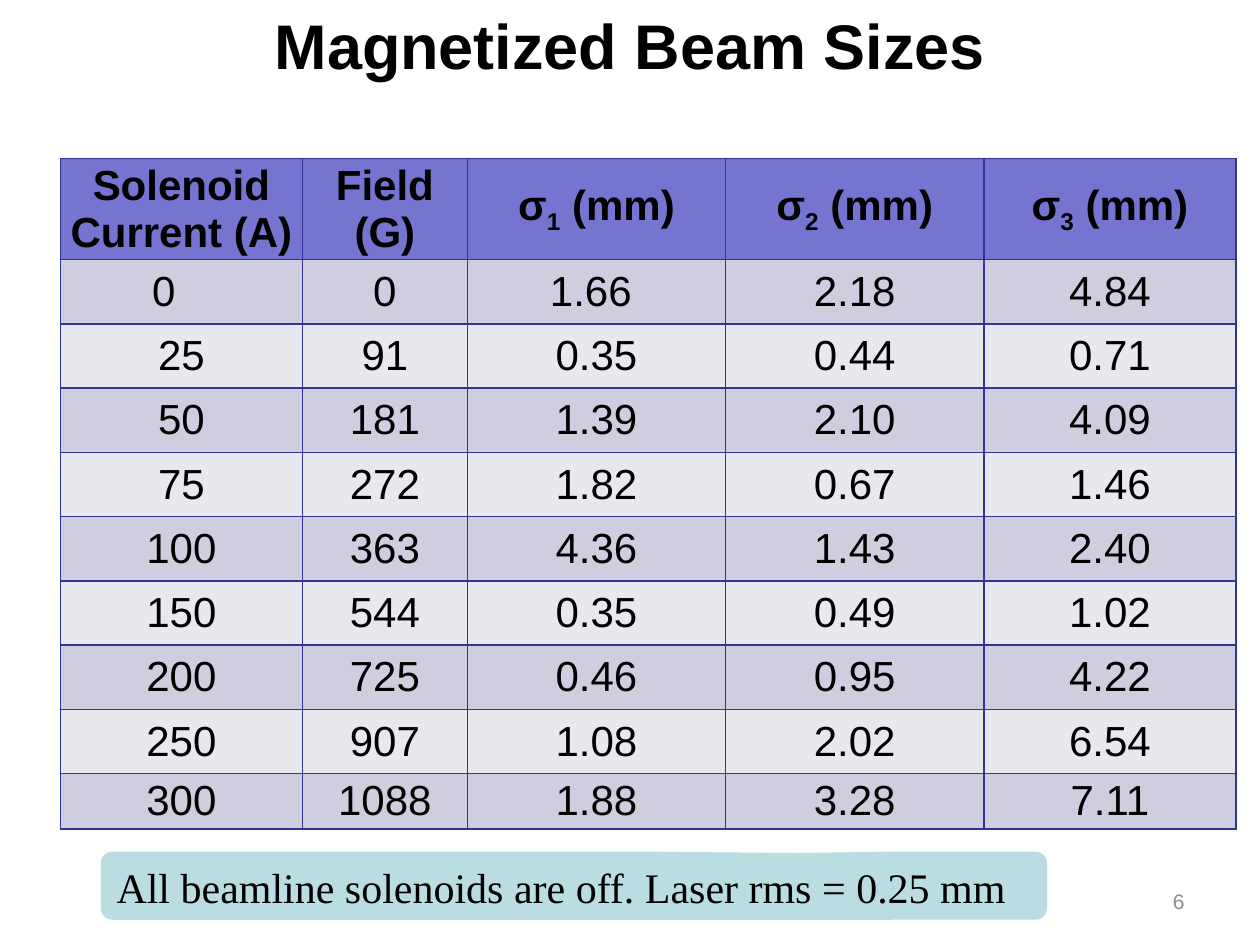
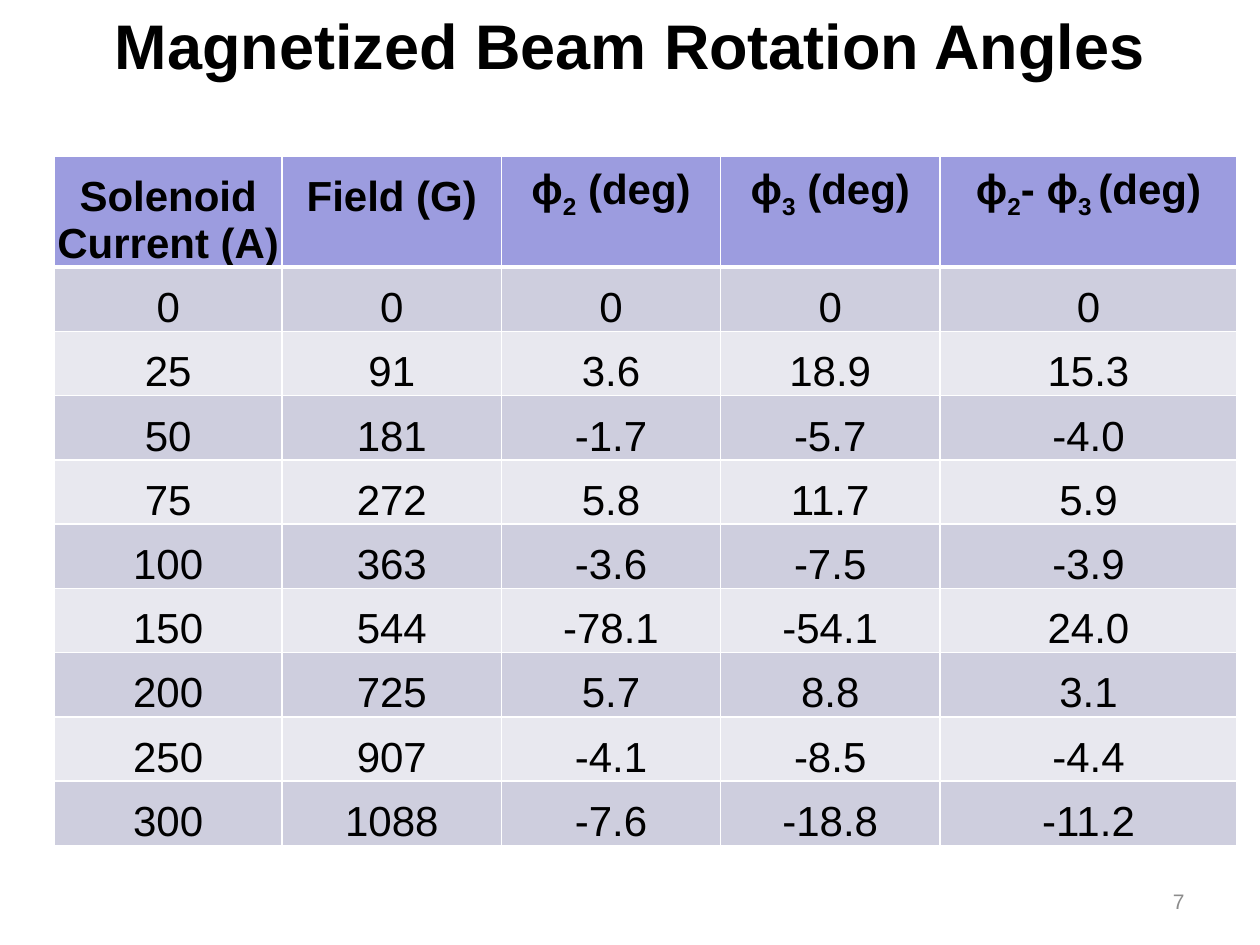
from dataclasses import dataclass
from lxml.etree import SubElement
from pptx import Presentation
from pptx.dml.color import RGBColor
from pptx.enum.shapes import MSO_SHAPE as Shape
from pptx.enum.text import MSO_ANCHOR as Anchor, MSO_AUTO_SIZE as Fit, PP_ALIGN as Align
from pptx.oxml.ns import qn
from pptx.util import Inches, Pt


@dataclass(frozen=True)
class Theme:
    sans: str = "Arial"
    serif: str = "Times New Roman"
    ink: str = "000000"
    gray: str = "8C8C8C"
    white: str = "FFFFFF"
    navy: str = "333399"
    violet: str = "7575D1"
    lilac: str = "9C9CDF"
    bands: tuple = ("CECEDE", "E8E8EF")
    note: str = "BADDE1"
    title: int = 36
    body: int = 24
    small: int = 12


THEME = Theme()
AMPS = "0 25 50 75 100 150 200 250 300".split()
FIELDS = "0 91 181 272 363 544 725 907 1088".split()
SIZES = (
    "1.66 0.35 1.39 1.82 4.36 0.35 0.46 1.08 1.88".split(),
    "2.18 0.44 2.10 0.67 1.43 0.49 0.95 2.02 3.28".split(),
    "4.84 0.71 4.09 1.46 2.40 1.02 4.22 6.54 7.11".split(),
)
ANGLES = (
    "0 3.6 -1.7 5.8 -3.6 -78.1 5.7 -4.1 -7.6".split(),
    "0 18.9 -5.7 11.7 -7.5 -54.1 8.8 -8.5 -18.8".split(),
    "0 15.3 -4.0 5.9 -3.9 24.0 3.1 -4.4 -11.2".split(),
)


def style(para, size, color=THEME.ink, bold=False, align=Align.CENTER, face=THEME.sans):
    para.alignment = align
    font = para.font
    font.name, font.size, font.bold = face, Pt(size), bold
    font.color.rgb = RGBColor.from_string(color)


def paint(fill, color):
    fill.solid()
    fill.fore_color.rgb = RGBColor.from_string(color)


def add_title(slide, text):
    title = slide.shapes.title
    title.left, title.top, title.width, title.height = map(Inches, (0, 0, 10, 0.96))
    frame = title.text_frame
    frame.text = text
    frame.auto_size = Fit.NONE
    frame.vertical_anchor = Anchor.TOP
    style(frame.paragraphs[0], THEME.title, bold=True)


def add_number(slide, number):
    box = slide.shapes.add_textbox(*map(Inches, (7.17, 6.95, 2.33, 0.4)))
    frame = box.text_frame
    frame.word_wrap = True
    frame.vertical_anchor = Anchor.MIDDLE
    para = frame.paragraphs[0]
    para.text = str(number)
    style(para, THEME.small, THEME.gray, align=Align.RIGHT)


def add_note(slide, text):
    note = slide.shapes.add_shape(
        Shape.ROUNDED_RECTANGULAR_CALLOUT, *map(Inches, (0.8, 6.76, 7.51, 0.54)))
    for index, value in enumerate((0.234, -0.48, 0.167)):
        note.adjustments[index] = value
    note.shadow.inherit = False
    note.line.fill.background()
    paint(note.fill, THEME.note)
    frame = note.text_frame
    frame.text = text
    frame.vertical_anchor = Anchor.TOP
    style(frame.paragraphs[0], THEME.body, align=Align.LEFT, face=THEME.serif)


def add_edges(cell, color, base):
    props = cell._tc.get_or_add_tcPr()
    for index, (side, width) in enumerate(zip("LRTB", (1, 1, 1, base))):
        line = props.makeelement(qn(f"a:ln{side}"), {"w": str(Pt(width))})
        fill = SubElement(line, qn("a:solidFill"))
        SubElement(fill, qn("a:srgbClr"), val=color)
        props.insert(index, line)


def fill_cell(cell, text, color, anchor, bold=False):
    cell.margin_left = cell.margin_right = cell.margin_top = cell.margin_bottom = 0
    cell.vertical_anchor = anchor
    paint(cell.fill, color)
    frame = cell.text_frame
    for row, line in enumerate(text.split("\n")):
        para = frame.add_paragraph() if row else frame.paragraphs[0]
        style(para, THEME.body, bold=bold)
        for index, part in enumerate(line.split("_")):
            run = para.add_run()
            run.text = part
            if index % 2:
                run.font._element.set("baseline", "-25000")


def add_grid(slide, spot, widths, heights, heads, data, head, edge, anchor, rule=1):
    rows = [heads, *zip(AMPS, FIELDS, *data)]
    frame = slide.shapes.add_table(
        len(rows), len(heads), *map(Inches, (*spot, sum(widths), sum(heights))))
    table = frame.table
    table.first_row = table.horz_banding = False
    for column, width in zip(table.columns, widths):
        column.width = Inches(width)
    for index, (row, height, texts) in enumerate(zip(table.rows, heights, rows)):
        row.height = Inches(height)
        top = index == 0
        color = head if top else THEME.bands[(index - 1) % 2]
        for cell, text in zip(row.cells, texts):
            fill_cell(cell, text, color, anchor, top)
            add_edges(cell, edge, rule if top else 1)
    if rule > 1:
        for cell in table.iter_cells():
            if cell._tc.row_idx == 1:
                cell._tc.tcPr.find(qn("a:lnT")).set("w", str(Pt(rule)))
    return table


def add_page(deck, title, number):
    slide = deck.slides.add_slide(deck.slide_layouts[5])
    add_title(slide, title)
    add_number(slide, number)
    return slide


def add_sizes(deck):
    slide = add_page(deck, "Magnetized Beam Sizes", 6)
    heads = ["Solenoid\nCurrent (A)", "Field\n(G)"] + [f"σ_{n}_ (mm)" for n in (1, 2, 3)]
    table = add_grid(
        slide, (0.48, 1.26), (1.92, 1.31, 2.05, 2.05, 2), (0.75, *[0.51] * 8, 0.44),
        heads, SIZES, THEME.violet, THEME.navy, Anchor.MIDDLE)
    table.cell(1, 0).margin_right = Inches(0.28)
    table.cell(1, 2).margin_right = Inches(0.09)
    add_note(slide, "All beamline solenoids are off. Laser rms = 0.25 mm")


def add_angles(deck):
    slide = add_page(deck, "Magnetized Beam Rotation Angles", 7)
    heads = ["Solenoid Current (A)", "Field (G)", "ɸ_2_ (deg)", "ɸ_3_ (deg)",
             "ɸ_2_- ɸ_3 _(deg)"]
    table = add_grid(
        slide, (0.43, 1.24), (1.81, 1.74, 1.74, 1.74, 2.36), (0.88, *[0.51] * 9),
        heads, ANGLES, THEME.lilac, THEME.white, Anchor.BOTTOM, 3)
    for column in range(1, len(heads)):
        table.cell(0, column).margin_bottom = Inches(0.37)


def main():
    deck = Presentation()
    deck.slide_width, deck.slide_height = Inches(10), Inches(7.5)
    add_sizes(deck)
    add_angles(deck)
    deck.save("out.pptx")


if __name__ == "__main__":
    main()
